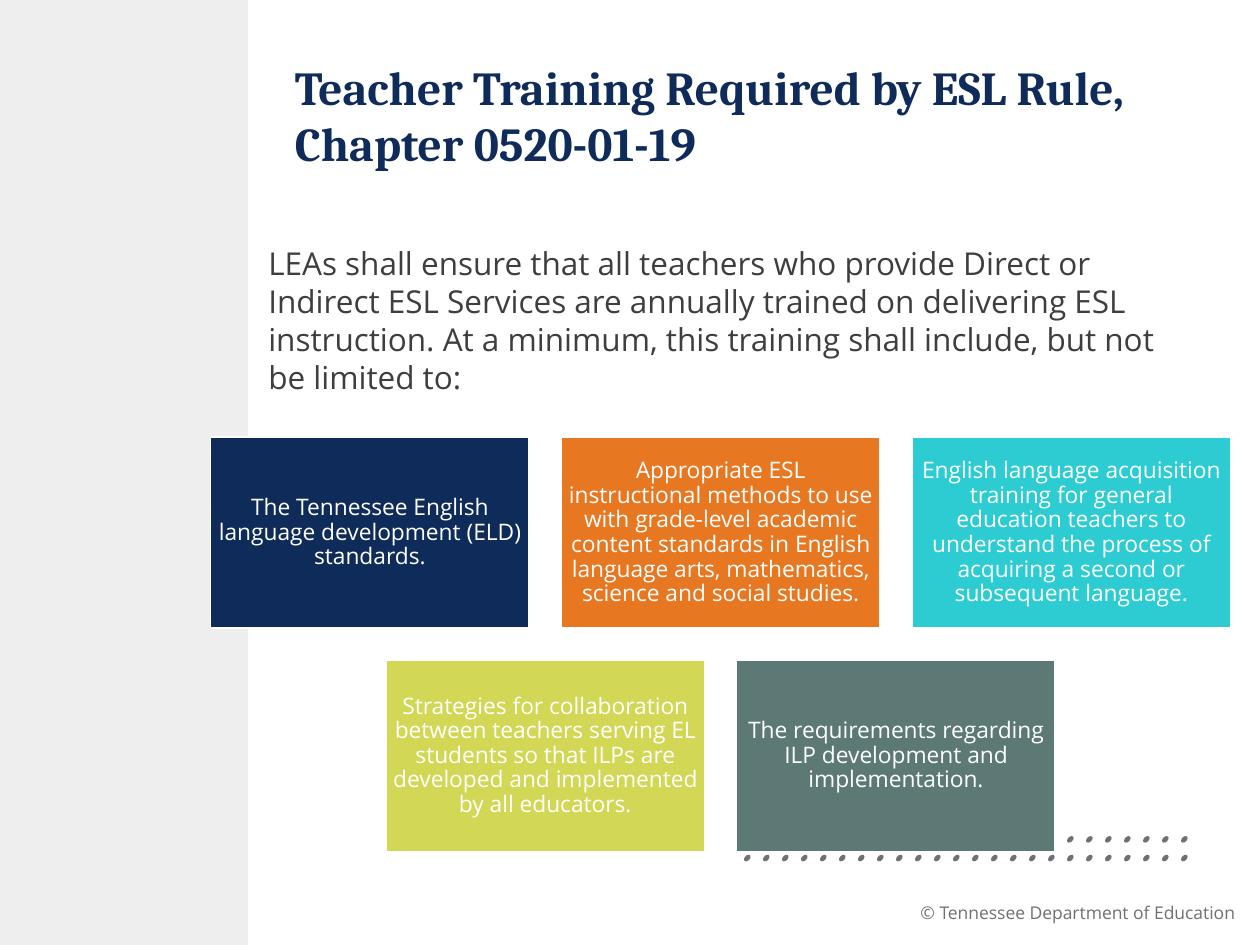
from pptx import Presentation
from pptx.dml.color import RGBColor
from pptx.enum import shapes, text
from pptx.util import Pt

COLORS = {
    "navy": "0E2B5A", "orange": "E87722", "teal": "2DCCD3", "lime": "D2D755",
    "sage": "5D7975", "white": "FFFFFF", "sidebar": "EEEEEE",
    "gray": "6E7073", "body": "3C3E40",
}
TITLE = "Teacher Training Required by ESL Rule, Chapter 0520-01-19"
INTRO = (
    "LEAs shall ensure that all teachers who provide Direct or Indirect ESL "
    "Services are annually trained on delivering ESL instruction. At a minimum, "
    "this training shall include, but not be limited to:"
)
FOOTER = "© Tennessee Department of Education"
TOPIC_ROWS = [
    [
        ("navy", "The Tennessee English language development (ELD) standards."),
        ("orange", "Appropriate ESL instructional methods to use with grade-level "
                   "academic content standards in English language arts, "
                   "mathematics, science and social studies."),
        ("teal", "English language acquisition training for general education "
                 "teachers to understand the process of acquiring a second or "
                 "subsequent language."),
    ],
    [
        ("lime", "Strategies for collaboration between teachers serving EL students "
                 "so that ILPs are developed and implemented by all educators."),
        ("sage", "The requirements regarding ILP development and implementation."),
    ],
]

CARD_W, CARD_H = 182.2, 109.3
CARD_STEP_X, CARD_STEP_Y = 200.4, 127.5
CARDS_CENTER, CARDS_TOP = 411.75, 249.8
DOT_W, DOT_H, DOT_STEP = 4.4, 2.9, 10.86
DOT_LEFT = 424.8
DOT_ROWS = [(488.9, 0, 24), (478.2, 16, 24)]


def rgb(name):
    return RGBColor.from_string(COLORS[name])


def place(sp, left, top, width, height):
    sp.left, sp.top, sp.width, sp.height = map(Pt, (left, top, width, height))


def add_shape(s, kind, box, fill, line=None):
    sp = s.shapes.add_shape(kind, *map(Pt, box))
    sp.shadow.inherit = False
    sp.fill.solid()
    sp.fill.fore_color.rgb = rgb(fill)
    if line:
        sp.line.color.rgb = rgb(line)
        sp.line.width = Pt(1)
    else:
        sp.line.fill.background()
    return sp


def write(sp, content, size, color, font="Open Sans", bold=False, align="LEFT",
          anchor="TOP", spacing=1.0, inset=None):
    tf = sp.text_frame
    tf.word_wrap = True
    tf.auto_size = text.MSO_AUTO_SIZE.NONE
    tf.vertical_anchor = text.MSO_ANCHOR[anchor]
    if inset is not None:
        tf.margin_left = tf.margin_right = Pt(inset)
        tf.margin_top = tf.margin_bottom = Pt(inset)
    p = tf.paragraphs[0]
    p.alignment = text.PP_ALIGN[align]
    p.line_spacing = spacing
    r = p.add_run()
    r.text = content
    r.font.name, r.font.size, r.font.bold = font, Pt(size), bold
    r.font.color.rgb = rgb(color)


def main():
    prs = Presentation()
    prs.slide_width, prs.slide_height = Pt(720), Pt(540)
    s = prs.slides.add_slide(prs.slide_layouts[5])

    footer = s.shapes.add_textbox(*map(Pt, (487.4, 513.4, 225.4, 18)))
    write(footer, FOOTER, 10, "gray", align="RIGHT", spacing=0.9)

    add_shape(s, shapes.MSO_SHAPE.RECTANGLE, (0, 0, 141.8, 540), "sidebar")

    for top, first, end in DOT_ROWS:
        for i in range(first, end):
            box = (DOT_LEFT + i * DOT_STEP, top, DOT_W, DOT_H)
            dot = add_shape(s, shapes.MSO_SHAPE.OVAL, box, "gray")
            dot.rotation = 314.4

    title = s.shapes.title
    place(title, 161.3, 18, 530.6, 95)
    write(title, TITLE, 27, "navy", font="Cambria", bold=True, anchor="MIDDLE")

    for row, topics in enumerate(TOPIC_ROWS):
        row_w = (len(topics) - 1) * CARD_STEP_X + CARD_W
        left = CARDS_CENTER - row_w / 2
        top = CARDS_TOP + row * CARD_STEP_Y
        for col, (fill, topic) in enumerate(topics):
            box = (left + col * CARD_STEP_X, top, CARD_W, CARD_H)
            card = add_shape(s, shapes.MSO_SHAPE.RECTANGLE, box, fill, "white")
            write(card, topic, 13, "white", align="CENTER", anchor="MIDDLE",
                  spacing=0.9, inset=3.6)

    intro = s.shapes.add_textbox(*map(Pt, (146.2, 136.1, 545.8, 94.3)))
    write(intro, INTRO, 18, "body")
    intro.text_frame.auto_size = text.MSO_AUTO_SIZE.SHAPE_TO_FIT_TEXT

    prs.save("out.pptx")


if __name__ == "__main__":
    main()
